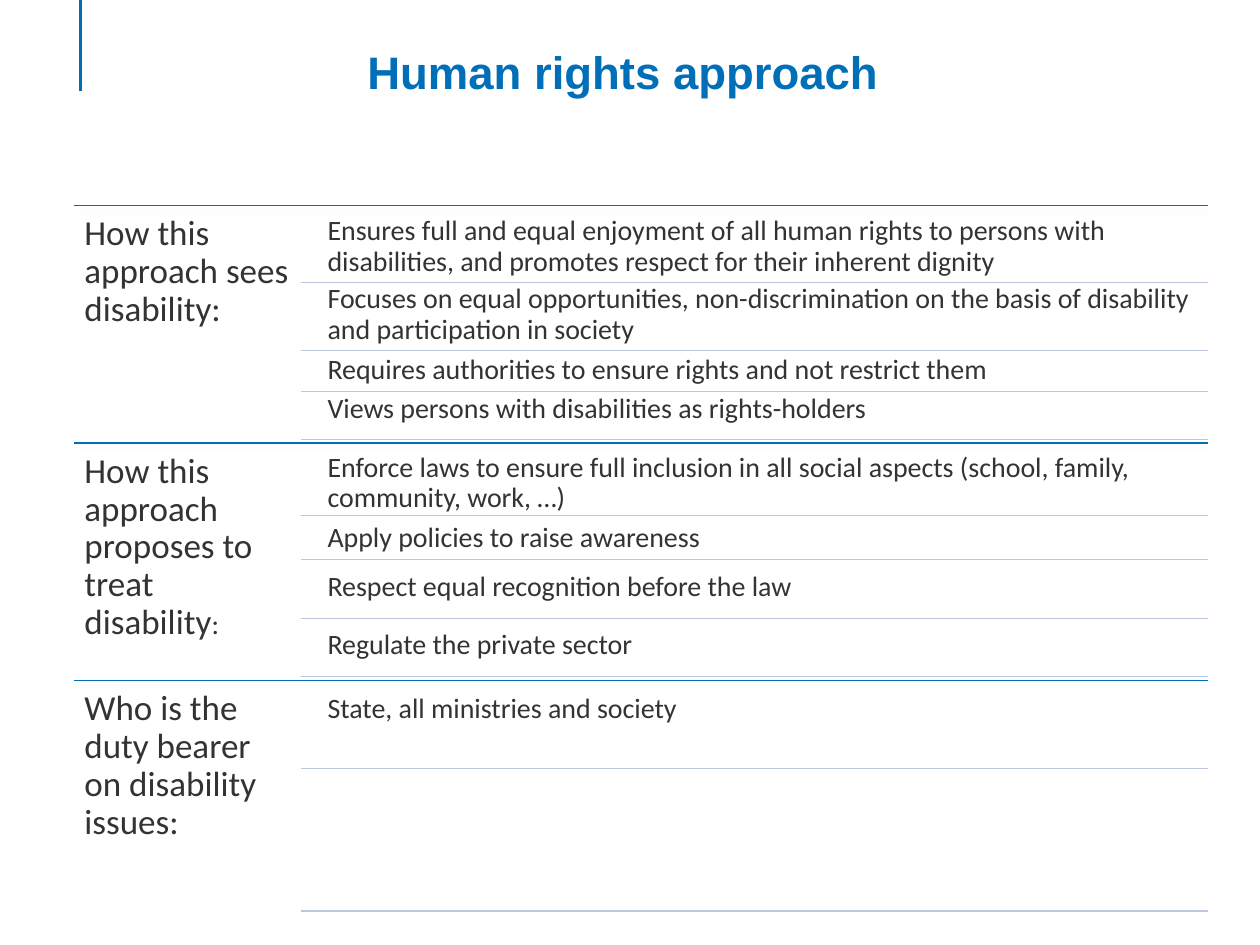
from lxml.etree import SubElement
from pptx import Presentation
from pptx.dml.color import RGBColor
from pptx.enum.shapes import MSO_CONNECTOR
from pptx.enum.text import MSO_ANCHOR, PP_ALIGN
from pptx.oxml.ns import qn
from pptx.util import Inches, Pt

COLORS = {"blue": "006FB7", "rule": "BDC8DF", "text": "333333", "shadow": "000000"}

LEFT, RIGHT = 0.59, 9.59
RULE_LEFT, ANSWER_LEFT = 2.39, 2.53
SECTION_TOP, SECTION_HEIGHT = 1.63, 1.885

# Each section: question as (text, size) spans, answers as (text, top, height), rule heights
SECTIONS = [
    ([("How this approach sees disability:", 20)],
     [("Ensures full and equal enjoyment of all human rights to persons with "
       "disabilities, and promotes respect for their inherent dignity", 1.65, 0.43),
      ("Focuses on equal opportunities, non-discrimination on the basis "
       "of disability and participation in society", 2.19, 0.57),
      ("Requires authorities to ensure rights and not restrict them", 2.75, 0.35),
      ("Views persons with disabilities as rights-holders", 3.06, 0.43)],
     [2.24, 2.78, 3.11, 3.49]),
    ([("How this approach proposes to treat disability", 20), (":", 16)],
     [("Enforce laws to ensure full inclusion in all social aspects "
       "(school, family, community, work, …)", 3.53, 0.44),
      ("Apply policies to raise awareness", 4.08, 0.45),
      ("Respect equal recognition before the law", 4.47, 0.44),
      ("Regulate the private sector", 4.93, 0.44)],
     [4.09, 4.44, 4.91, 5.37]),
    ([("Who is the duty bearer on disability issues:", 20)],
     [("State, all ministries and society", 5.44, 0.74)],
     [6.1, 7.23]),
]


def add_text(paragraph, text, *, size, font="Calibri", color="text", bold=False):
    span = paragraph.add_run()
    span.text = text
    span.font.name = font
    span.font.size = Pt(size)
    span.font.bold = bold
    span.font.color.rgb = RGBColor.from_string(COLORS[color])


class PageBuilder:
    def __init__(self, page):
        self.page = page

    def text_box(self, left, top, width, height, spans, *, inset,
                 align=PP_ALIGN.LEFT, spacing=0.9, **style):
        box = self.page.shapes.add_textbox(
            Inches(left), Inches(top), Inches(width), Inches(height))
        frame = box.text_frame
        frame.word_wrap = True
        frame.vertical_anchor = MSO_ANCHOR.TOP
        frame.margin_left = frame.margin_right = Inches(inset)
        frame.margin_top = frame.margin_bottom = Inches(inset)
        paragraph = frame.paragraphs[0]
        paragraph.alignment = align
        paragraph.line_spacing = spacing
        for text, size in spans:
            add_text(paragraph, text, size=size, **style)

    def line(self, start, end, *, color, width=0.75, shadow=None):
        line = self.page.shapes.add_connector(
            MSO_CONNECTOR.STRAIGHT, *(Inches(value) for value in start + end))
        line.line.color.rgb = RGBColor.from_string(COLORS[color])
        line.line.width = Pt(width)
        effects = SubElement(line._element.spPr, qn("a:effectLst"))
        if shadow:
            opacity, distance = shadow
            outer = SubElement(effects, qn("a:outerShdw"), blurRad=str(Pt(3.1)),
                               dist=str(Pt(distance)), dir="5400000", rotWithShape="0")
            tint = SubElement(outer, qn("a:srgbClr"), val=COLORS["shadow"])
            SubElement(tint, qn("a:alpha"), val=str(opacity * 1000))

    def section(self, top, question, answers, rules):
        self.line((LEFT, top), (RIGHT, top), color="blue", shadow=(35, 1.8))
        self.text_box(LEFT, top, 1.8, 1.88, question, inset=0.08)
        for text, answer_top, height in answers:
            self.text_box(ANSWER_LEFT, answer_top, 7.07, height, [(text, 16)], inset=0.07)
        for y in rules:
            self.line((RULE_LEFT, y), (RIGHT, y), color="rule", shadow=(38, 1.6))


def main():
    deck = Presentation()
    deck.slide_width, deck.slide_height = Inches(10), Inches(7.5)
    builder = PageBuilder(deck.slides.add_slide(deck.slide_layouts[6]))

    # Heading with its accent line
    builder.line((0.64, 0), (0.64, 0.72), color="blue", width=2)
    builder.text_box(0.81, 0.3, 8.27, 1.19, [("Human rights approach", 26)], inset=0.05,
                     align=PP_ALIGN.CENTER, spacing=1.0, font="Arial", color="blue", bold=True)

    # Questions with their answers
    for index, section in enumerate(SECTIONS):
        builder.section(SECTION_TOP + index * SECTION_HEIGHT, *section)

    deck.save("out.pptx")


if __name__ == "__main__":
    main()
